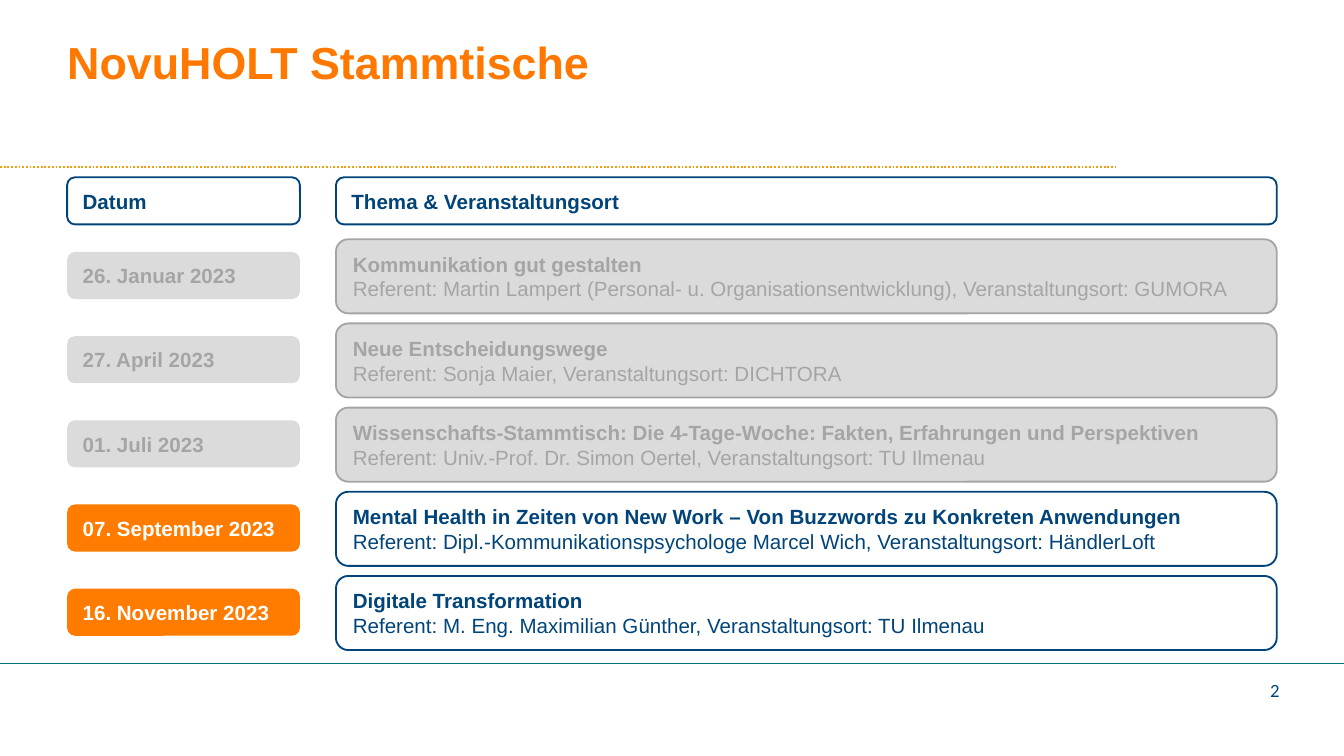
from lxml.etree import SubElement
from pptx import Presentation
from pptx.dml.color import RGBColor
from pptx.enum.dml import MSO_LINE
from pptx.enum.shapes import MSO_CONNECTOR, MSO_SHAPE
from pptx.enum.text import MSO_ANCHOR, MSO_AUTO_SIZE, PP_ALIGN
from pptx.oxml.ns import qn
from pptx.util import Cm, Pt

BLUE, ORANGE, GREY, LIGHT, WHITE = "004479", "FF7C00", "A5A5A5", "DBDBDB", "FFFFFF"


def rgb(color):
    return RGBColor.from_string(color)


def add_box(x, y, w, h, lines, color, fill=None, line=None):
    """Rounded box whose first line of text is bold."""
    sp = s.shapes.add_shape(MSO_SHAPE.ROUNDED_RECTANGLE, Cm(x), Cm(y), Cm(w), Cm(h))
    sp.shadow.inherit = False
    if fill:
        sp.fill.solid()
        sp.fill.fore_color.rgb = rgb(fill)
    else:
        sp.fill.background()
    if line:
        sp.line.color.rgb = rgb(line)
        sp.line.width = Pt(1)
    else:
        sp.line.fill.background()
    tf = sp.text_frame
    tf.word_wrap = True
    tf.vertical_anchor = MSO_ANCHOR.MIDDLE
    for i, text in enumerate(lines):
        p = tf.paragraphs[0] if i == 0 else tf.add_paragraph()
        p.alignment = PP_ALIGN.LEFT
        r = p.add_run()
        r.text = text
        r.font.name, r.font.size, r.font.bold = "Arial", Pt(11), i == 0
        r.font.color.rgb = rgb(color)


prs = Presentation()
prs.slide_width, prs.slide_height = Cm(25.4), Cm(14.28)
s = prs.slides.add_slide(prs.slide_layouts[5])

# Footer rule and dotted header rule
for y, x_end, color, width, dash in [(12.54, 25.4, "007479", 0.5, None),
                                     (3.15, 21.1, "F49D11", 1, MSO_LINE.ROUND_DOT)]:
    cn = s.shapes.add_connector(MSO_CONNECTOR.STRAIGHT, 0, Cm(y), Cm(x_end), Cm(y))
    cn.line.color.rgb = rgb(color)
    cn.line.width = Pt(width)
    if dash:
        cn.line.dash_style = dash
    SubElement(cn._element.spPr, qn("a:effectLst"))

# Title
sp = s.shapes.title
sp.left, sp.top, sp.width, sp.height = Cm(1.27), Cm(0.64), Cm(19.84), Cm(1.14)
tf = sp.text_frame
tf.word_wrap = True
tf.auto_size = MSO_AUTO_SIZE.NONE
tf.vertical_anchor = MSO_ANCHOR.TOP
tf.margin_left = tf.margin_right = 0
p = tf.paragraphs[0]
p.alignment = PP_ALIGN.LEFT
p.line_spacing = 0.9
p.space_before = Pt(0)
r = p.add_run()
r.text = "NovuHOLT Stammtische"
r.font.name, r.font.size, r.font.bold = "Arial", Pt(24), True
r.font.color.rgb = rgb("FF7900")

# Column headings
DATE_X, DATE_W, DATE_H = 1.27, 4.4, 0.89
TOPIC_X, TOPIC_W, TOPIC_H = 6.35, 17.78, 1.4
add_box(DATE_X, 3.35, DATE_W, DATE_H, ["Datum"], BLUE, line=BLUE)
add_box(TOPIC_X, 3.35, TOPIC_W, DATE_H, ["Thema & Veranstaltungsort"], BLUE, line=BLUE)

# Events: date, topic, speaker and place, already past
events = [
    ("26. Januar 2023", "Kommunikation gut gestalten",
     "Referent: Martin Lampert (Personal- u. Organisationsentwicklung), "
     "Veranstaltungsort: GUMORA", True),
    ("27. April 2023", "Neue Entscheidungswege",
     "Referent: Sonja Maier, Veranstaltungsort: DICHTORA", True),
    ("01. Juli 2023",
     "Wissenschafts-Stammtisch: Die 4-Tage-Woche: Fakten, Erfahrungen und Perspektiven",
     "Referent: Univ.-Prof. Dr. Simon Oertel, Veranstaltungsort: TU Ilmenau", True),
    ("07. September 2023",
     "Mental Health in Zeiten von New Work – Von Buzzwords zu Konkreten Anwendungen",
     "Referent: Dipl.-Kommunikationspsychologe Marcel Wich, "
     "Veranstaltungsort: HändlerLoft", False),
    ("16. November 2023", "Digitale Transformation",
     "Referent: M. Eng. Maximilian Günther, Veranstaltungsort: TU Ilmenau", False),
]
for i, (date, topic, details, past) in enumerate(events):
    y = 4.52 + 1.59 * i
    add_box(DATE_X, y + 0.24, DATE_W, DATE_H, [date],
            GREY if past else WHITE, fill=LIGHT if past else ORANGE)
    color = GREY if past else BLUE
    add_box(TOPIC_X, y, TOPIC_W, TOPIC_H, [topic, details], color,
            fill=LIGHT if past else WHITE, line=color)

# Slide number
tf = s.shapes.add_textbox(Cm(22.35), Cm(12.65), Cm(1.83), Cm(0.76)).text_frame
tf.word_wrap = True
tf.vertical_anchor = MSO_ANCHOR.MIDDLE
tf.margin_left = tf.margin_right = 0
p = tf.paragraphs[0]
p.alignment = PP_ALIGN.RIGHT
r = p.add_run()
r.text = "2"
r.font.name, r.font.size = "Calibri", Pt(10)
r.font.color.rgb = rgb(BLUE)

prs.save("out.pptx")
